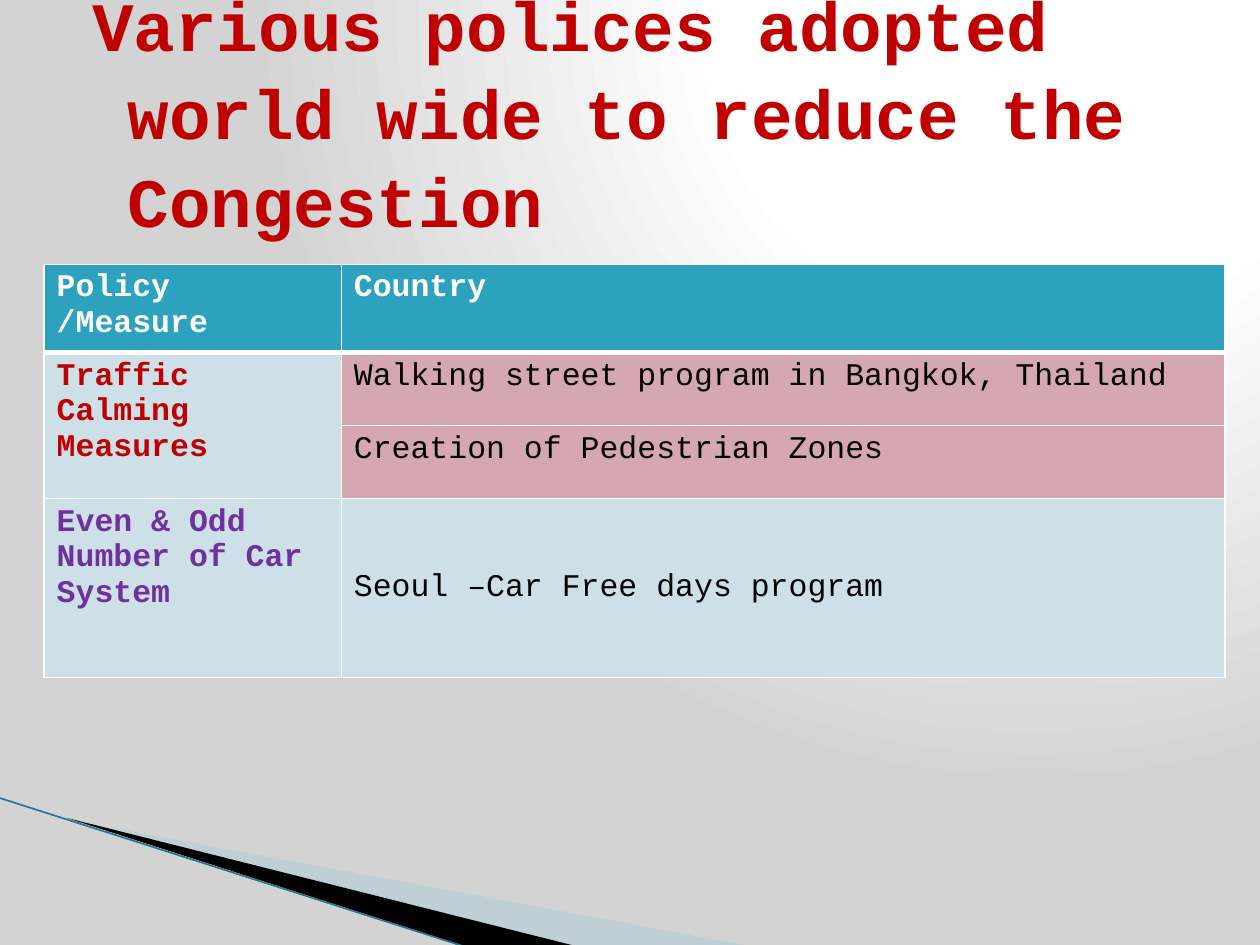
from lxml import etree
from pptx import Presentation
from pptx.dml.color import RGBColor
from pptx.enum.dml import MSO_FILL
from pptx.enum.shapes import MSO_CONNECTOR
from pptx.enum.text import MSO_ANCHOR
from pptx.oxml import parse_xml
from pptx.oxml.ns import nsdecls, qn
from pptx.util import Cm, Pt

STRAIGHT = MSO_CONNECTOR.STRAIGHT
MIDDLE, TOP = MSO_ANCHOR.MIDDLE, MSO_ANCHOR.TOP
GRADIENT = MSO_FILL.GRADIENT
FONT = "Courier New"
COLORS = {
    "white": "FFFFFF", "gray": "D3D3D3", "black": "000000",
    "red": "C00000", "purple": "7030A0", "teal": "2DA2BF",
    "pale": "CDE0E8", "rose": "D5A7B1", "mist": "A0CBDC", "edge": "1F7A92",
}
HEAD = {"size": Pt(18), "bold": True, "color": "white"}
RED = {**HEAD, "color": "red"}
PURPLE = {**HEAD, "color": "purple"}
BODY = {"size": Pt(18), "bold": False, "color": "black"}
TITLE = {"size": Pt(39.6), "bold": True, "color": "red"}

# row, column, text, format, fill, hanging indent, anchor
CELLS = [
    (0, 0, "Policy /Measure", HEAD, "teal", 0, TOP),
    (0, 1, "Country", HEAD, "teal", 0, TOP),
    (1, 0, "Traffic Calming Measures", RED, "pale", 0, TOP),
    (1, 1, "Walking street program in Bangkok, Thailand", BODY, "rose", 0.97, TOP),
    (2, 1, "Creation of Pedestrian Zones", BODY, "rose", 0.97, TOP),
    (3, 0, "Even & Odd Number of Car System", PURPLE, "pale", 0, TOP),
    (3, 1, "Seoul –Car Free days program", BODY, "pale", 0.97, MIDDLE),
]


def rgb(name):
    return RGBColor.from_string(COLORS[name])


def write(frame, text, style, left=0, first=0):
    para = frame.paragraphs[0]
    if left:
        props = para._p.get_or_add_pPr()
        props.set("marL", str(Cm(left)))
        props.set("indent", str(Cm(first)))
    run = para.add_run()
    run.text = text
    run.font.name = FONT
    for key, value in style.items():
        if key == "color":
            run.font.color.rgb = rgb(value)
        else:
            setattr(run.font, key, value)
    return para


def add_back(slide):
    """Fill the background with a round glow from the top right."""
    fill = slide.background.fill
    fill.gradient()
    assert fill.type == GRADIENT
    stops = "".join(
        f'<a:gs pos="{pos * 1000}"><a:srgbClr val="{COLORS[name]}"/></a:gs>'
        for pos, name in ((0, "white"), (40, "white"), (100, "gray")))
    glow = parse_xml(
        f'<a:gradFill {nsdecls("a")} rotWithShape="1"><a:gsLst>{stops}</a:gsLst>'
        '<a:path path="circle">'
        '<a:fillToRect l="65000" t="0" r="0" b="98000"/></a:path></a:gradFill>')
    old = slide.background._cSld.find(".//" + qn("a:gradFill"))
    old.getparent().replace(old, glow)


def add_wedge(slide, points, color, alpha=None):
    """Draw a closed outline through points given in cm."""
    spots = [(x * 100, y * 100) for x, y in points]
    pen = slide.shapes.build_freeform(*spots[0], scale=Cm(0.01))
    pen.add_line_segments(spots[1:], close=True)
    shape = pen.convert_to_shape()
    shape.shadow.inherit = False
    shape.line.fill.background()
    shape.fill.solid()
    shape.fill.fore_color.rgb = rgb(color)
    if alpha:
        tint = shape._element.spPr.find(".//" + qn("a:srgbClr"))
        etree.SubElement(tint, qn("a:alpha")).set("val", str(alpha * 1000))


def add_line(slide, x1, y1, x2, y2, color, width):
    line = slide.shapes.add_connector(STRAIGHT, Cm(x1), Cm(y1), Cm(x2), Cm(y2))
    line.line.color.rgb = rgb(color)
    line.line.width = Pt(width)
    etree.SubElement(line._element.spPr, qn("a:effectLst"))


def add_title(slide, text):
    box = slide.shapes.add_textbox(Cm(1.3), Cm(1.52), Cm(22.86), Cm(1.37))
    frame = box.text_frame
    frame.word_wrap = True
    frame.vertical_anchor = MIDDLE
    para = write(frame, text, TITLE, 1.02, -0.71)
    para.line_spacing = 1.06


def add_edges(cell, base):
    props = cell._tc.get_or_add_tcPr()
    for side, width in (("L", 1), ("R", 1), ("T", 1), ("B", base)):
        props.append(parse_xml(
            f'<a:ln{side} {nsdecls("a")} w="{Pt(width)}"><a:solidFill>'
            f'<a:srgbClr val="{COLORS["white"]}"/></a:solidFill></a:ln{side}>'))


def add_grid(slide):
    cols, rows = (5.99, 17.81), (1.47, 1.47, 1.47, 3.61)
    table = slide.shapes.add_table(
        len(rows), len(cols), Cm(0.89), Cm(5.33),
        Cm(sum(cols)), Cm(sum(rows))).table
    table.horz_banding = False
    for col, width in zip(table.columns, cols):
        col.width = Cm(width)
    for row, height in zip(table.rows, rows):
        row.height = Cm(height)
    table.cell(1, 0).merge(table.cell(2, 0))
    for row, col, text, style, fill, indent, anchor in CELLS:
        cell = table.cell(row, col)
        add_edges(cell, 1 if row else 3)
        cell.fill.solid()
        cell.fill.fore_color.rgb = rgb(fill)
        cell.vertical_anchor = anchor
        write(cell.text_frame, text, style, indent, -indent)


def main():
    deck = Presentation()
    deck.slide_width, deck.slide_height = Cm(25.4), Cm(19.05)
    slide = deck.slides.add_slide(deck.slide_layouts[6])
    add_back(slide)
    add_wedge(slide, [(1.4, 16.53), (15.11, 19.07), (11.58, 19.07)], "mist", 40)
    add_wedge(slide, [(1.35, 16.49), (11.6, 19.07), (9.45, 19.1)], "black")
    add_line(slide, -0.03, 16.08, 9.42, 19.1, "edge", 0.95)
    add_title(slide, "Various polices adopted world wide to reduce the Congestion")
    add_grid(slide)
    deck.save("out.pptx")


if __name__ == "__main__":
    main()
